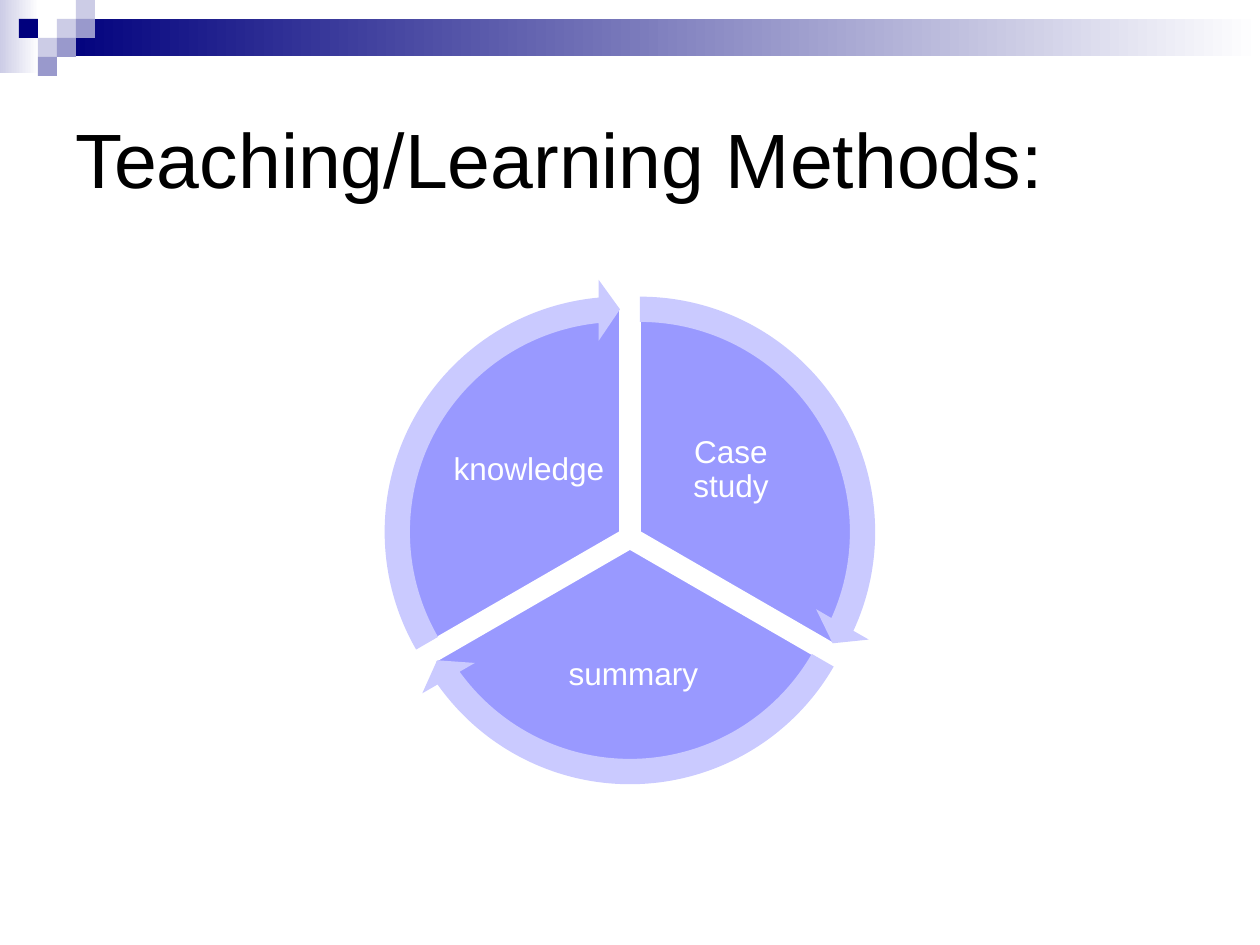
from pptx import Presentation
from pptx.dml.color import RGBColor
from pptx.enum.shapes import MSO_SHAPE as SHAPE
from pptx.enum.text import MSO_ANCHOR as ANCHOR, PP_ALIGN as ALIGN
from pptx.util import Pt

PX = 914400 / 126
NAVY = RGBColor(0x00, 0x00, 0x7D)
SLATE = RGBColor(0x99, 0x99, 0xCC)
PALE = RGBColor(0xCC, 0xCC, 0xE6)
VIOLET = RGBColor(0x99, 0x99, 0xFF)
LILAC = RGBColor(0xCA, 0xCA, 0xFF)
WHITE = RGBColor(0xFF, 0xFF, 0xFF)
BLACK = RGBColor(0x00, 0x00, 0x00)


def add_shape(kind, box, color, fade=False, adjust=()):
    """Add a lineless preset shape; fade runs its colour to white on the right."""
    sp = s.shapes.add_shape(kind, *(round(v * PX) for v in box))
    sp.shadow.inherit = False
    sp.line.fill.background()
    for i, value in enumerate(adjust):
        sp.adjustments[i] = value
    if fade:
        sp.fill.gradient()
        sp.fill.gradient_angle = 0
        for stop, stop_color in zip(sp.fill.gradient_stops, (color, WHITE)):
            stop.color.rgb = stop_color
    else:
        sp.fill.solid()
        sp.fill.fore_color.rgb = color
    return sp


def write(sp, text, size, color, align=ALIGN.LEFT, spacing=None):
    tf = sp.text_frame
    tf.word_wrap = True
    tf.vertical_anchor = ANCHOR.MIDDLE
    p = tf.paragraphs[0]
    p.alignment = align
    p.line_spacing = spacing
    r = p.add_run()
    r.text = text
    r.font.name = "Arial"
    r.font.size = Pt(size)
    r.font.color.rgb = color
    return tf


prs = Presentation()
prs.slide_width = round(1260 * PX)
prs.slide_height = round(945 * PX)
s = prs.slides.add_slide(prs.slide_layouts[5])

# Header band with its checkered squares
add_shape(SHAPE.RECTANGLE, (0, 0, 39, 73), PALE, fade=True)
add_shape(SHAPE.RECTANGLE, (57, 19, 1203, 37), NAVY, fade=True)
SQUARE = 19
for col, row, color in [(3, 1, PALE), (4, 0, PALE), (4, 1, SLATE), (2, 2, PALE),
                        (1, 1, NAVY), (3, 2, SLATE), (2, 3, SLATE)]:
    add_shape(SHAPE.RECTANGLE, (col * SQUARE, row * SQUARE, SQUARE, SQUARE), color)

title = s.shapes.title
title.left, title.top, title.width, title.height = (
    round(v * PX) for v in (63, 63, 1134, 189))
write(title, "Teaching/Learning Methods:", 44, BLACK)

# Cycle: label, centre, label box, pie angles, arrow angles (in units of 5/3 degrees)
PIE, RING = 450, 506
steps = [
    ("Case study", (640, 532), (651, 403, 160, 134), (162, 18), (14.73, 161.99)),
    ("summary", (630, 549), (513, 616, 241, 118), (18, 90), (86.72, 18)),
    ("knowledge", (620, 532), (449, 403, 160, 134), (90, 162), (158.73, 90)),
]
for label, (cx, cy), box, angles, _ in steps:
    pie = add_shape(SHAPE.PIE, (cx - PIE / 2, cy - PIE / 2, PIE, PIE), VIOLET,
                    adjust=angles)
    pie.line.color.rgb = WHITE
    pie.line.width = Pt(1)
    tb = s.shapes.add_textbox(*(round(v * PX) for v in box))
    tf = write(tb, label, 18, WHITE, align=ALIGN.CENTER, spacing=0.9)
    tf.margin_left = tf.margin_right = round(4 * PX)
    tf.margin_top = tf.margin_bottom = round(4 * PX)

for _, (cx, cy), _, _, (end, start) in steps:
    add_shape(SHAPE.CIRCULAR_ARROW, (cx - RING / 2, cy - RING / 2, RING, RING), LILAC,
              adjust=(0.05, 3.28, end, start, 0.06))

prs.save("out.pptx")
